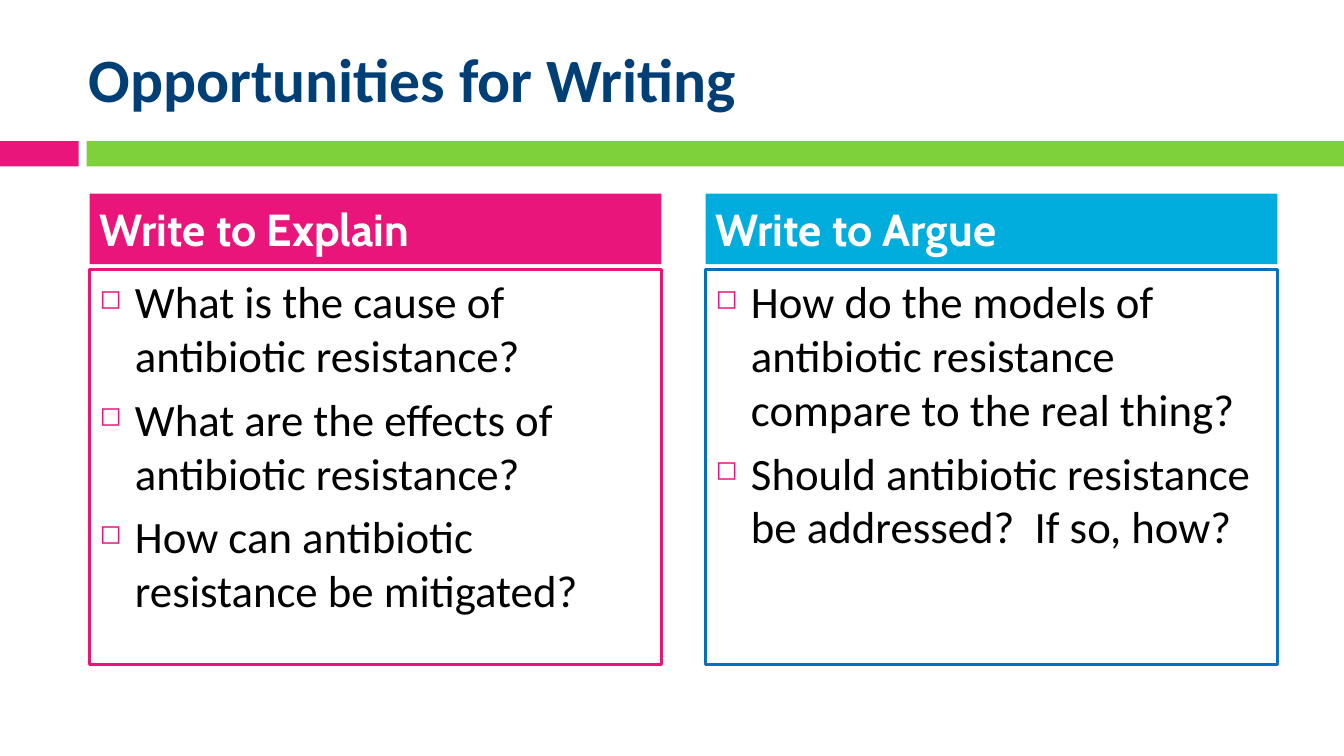
from dataclasses import dataclass

from lxml.etree import SubElement
from pptx import Presentation
from pptx.dml.color import RGBColor
from pptx.enum.shapes import MSO_SHAPE
from pptx.enum.text import MSO_ANCHOR, PP_ALIGN
from pptx.oxml.ns import qn
from pptx.util import Inches, Pt


@dataclass(frozen=True)
class Theme:
    """Colours, fonts and type sizes of the deck."""

    pink: str = "EA157A"
    green: str = "7FD13B"
    cyan: str = "00ADDC"
    blue: str = "0070C0"
    navy: str = "003F75"
    black: str = "000000"
    white: str = "FFFFFF"
    body_font: str = "Calibri"
    heading_font: str = "Cabin"
    title_size: int = 44
    body_size: int = 32
    paragraph_gap: int = 7
    bullet_percent: int = 60
    bullet_indent: float = 0.35


THEME = Theme()


def add_box(page, left, top, width, height, fill=None, line=None):
    """Draw a rectangle with an optional fill and outline."""
    box = page.shapes.add_shape(
        MSO_SHAPE.RECTANGLE, Inches(left), Inches(top), Inches(width), Inches(height)
    )
    box.shadow.inherit = False
    if fill:
        box.fill.solid()
        box.fill.fore_color.rgb = RGBColor.from_string(fill)
    else:
        box.fill.background()
    if line:
        box.line.color.rgb = RGBColor.from_string(line)
        box.line.width = Pt(2)
    else:
        box.line.fill.background()
    return box


def add_bullet(para):
    """Give a paragraph a hanging square bullet."""
    properties = para._p.get_or_add_pPr()
    indent = Inches(THEME.bullet_indent)
    properties.set("marL", str(indent))
    properties.set("indent", str(-indent))
    colour = SubElement(properties, qn("a:buClr"))
    SubElement(colour, qn("a:srgbClr"), val=THEME.pink)
    SubElement(properties, qn("a:buSzPct"), val=str(THEME.bullet_percent * 1000))
    SubElement(properties, qn("a:buChar"), char="◻")


def write_text(box, *lines, size=THEME.body_size, font=THEME.body_font,
               colour=THEME.black, bold=False, bullets=False,
               anchor=MSO_ANCHOR.MIDDLE):
    """Fill a box with one formatted paragraph per line."""
    frame = box.text_frame
    frame.word_wrap = True
    frame.vertical_anchor = anchor
    for index, line in enumerate(lines):
        para = frame.add_paragraph() if index else frame.paragraphs[0]
        para.alignment = PP_ALIGN.LEFT
        if index:
            para.space_before = Pt(THEME.paragraph_gap)
        if bullets:
            add_bullet(para)
        span = para.add_run()
        span.text = line
        span.font.size = Pt(size)
        span.font.name = font
        span.font.bold = bold
        span.font.color.rgb = RGBColor.from_string(colour)


def add_header(page, left, top, width, title):
    """Place the title with the two-colour band beneath it."""
    box = page.shapes.add_textbox(
        Inches(left + 0.78), Inches(top + 0.3), Inches(11.89), Inches(0.95)
    )
    write_text(box, title, size=THEME.title_size, colour=THEME.navy, bold=True)
    add_box(page, left, top + 1.4, 0.78, 0.25, fill=THEME.pink)
    add_box(page, left + 0.86, top + 1.4, width - 0.86, 0.25, fill=THEME.green)


def add_column(page, left, top, width, heading, questions, fill, outline):
    """Place a filled heading above an outlined list of questions."""
    panel = add_box(page, left, top + 0.75, width, 3.92, line=outline)
    write_text(panel, *questions, bullets=True, anchor=MSO_ANCHOR.TOP)
    label = add_box(page, left, top, width, 0.7, fill=fill)
    write_text(label, heading, font=THEME.heading_font, colour=THEME.white, bold=True)


def main():
    """Build the slide and save the deck."""
    deck = Presentation()
    deck.slide_width, deck.slide_height = Inches(13.33), Inches(7.5)
    page = deck.slides.add_slide(deck.slide_layouts[6])
    add_header(page, 0, 0, 13.33, "Opportunities for Writing")
    columns = [
        ("Write to Explain", [
            "What is the cause of antibiotic resistance?",
            "What are the effects of antibiotic resistance?",
            "How can antibiotic resistance be mitigated?",
        ], THEME.pink, THEME.pink),
        ("Write to Argue", [
            "How do the models of antibiotic resistance compare to the real thing?",
            "Should antibiotic resistance be addressed?  If so, how?",
        ], THEME.cyan, THEME.blue),
    ]
    width, gap = 5.67, 0.44
    for index, column in enumerate(columns):
        add_column(page, 0.89 + index * (width + gap), 1.92, width, *column)
    deck.save("out.pptx")


if __name__ == "__main__":
    main()
